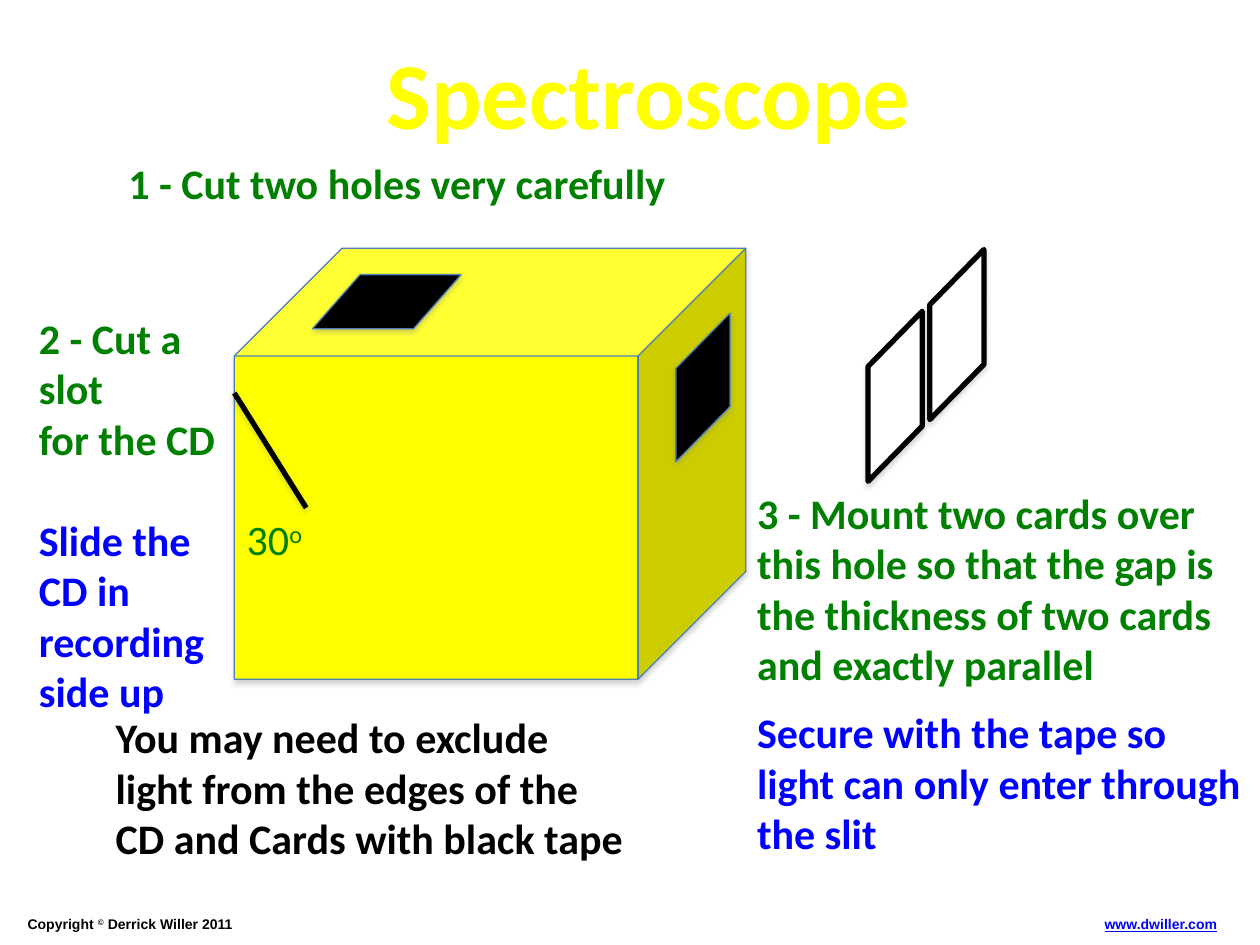
"""Build the Spectroscope instruction slide."""
from lxml.etree import SubElement
from pptx import Presentation
from pptx.dml.color import RGBColor
from pptx.enum.shapes import MSO_CONNECTOR, MSO_SHAPE
from pptx.enum.text import MSO_ANCHOR, PP_ALIGN
from pptx.oxml.ns import qn
from pptx.util import Inches, Pt

THEME = {
    "yellow": "FFFF00", "green": "008000", "blue": "0000FF",
    "black": "000000", "white": "FFFFFF", "edge": "4A7EBB", "shadow": "808080",
    "heading": "Calibri", "footer": "Arial",
    "title_size": 54, "body_size": 24, "footer_size": 8,
}

STEPS = [
    {"at": (0.92, 1.2, 4.52, 0.51), "wrap": False,
     "paras": [("1 - Cut two holes very carefully", "green", 0)]},
    {"at": (0.21, 2.43, 1.65, 3.33),
     "paras": [("2 - Cut a slot", "green", 0), ("for the CD", "green", 0),
               ("Slide the CD in recording side up", "blue", 29)]},
    {"at": (5.91, 3.82, 4.09, 3.06),
     "paras": [("3 - Mount two cards over this hole so that the gap is the "
                "thickness of two cards and exactly parallel", "green", 0),
               ("Secure with the tape so light can only enter through the slit",
                "blue", 10)]},
    {"at": (0.82, 5.6, 4.31, 1.31),
     "paras": [("You may need to exclude light from the edges of the CD and "
                "Cards with black tape", "black", 0)]},
]
TITLE = {"at": (2.97, 0.23, 4.38, 0.77), "wrap": False, "size": "title_size",
         "paras": [("Spectroscope", "yellow", 0)]}
ANGLE = {"at": (1.86, 4.03, 0.66, 0.5), "wrap": False, "bold": False,
         "paras": [("30^o", "green", 0)]}
COPYRIGHT = {"at": (0.12, 7.22, 5.65, 0.24), "font": "footer", "size": "footer_size",
             "paras": [("Copyright ^©^ Derrick Willer 2011", "black", 0)]}
WEBSITE = {"at": (8.42, 7.22, 1.34, 0.24), "font": "footer", "size": "footer_size",
           "align": PP_ALIGN.RIGHT, "underline": True,
           "paras": [("www.dwiller.com", "blue", 0)]}

CUBE = (1.86, 1.97, 4.06, 3.42)
TOP_HOLE = (2.48, 2.18, 1.18, 0.43)
SIDE_HOLE = (4.99, 2.86, 1.18, 0.43)
CARD = (6.92, 2.44, 1.35, 0.43)
CARD_STEP = 0.49
SLOT = (1.86, 3.12, 2.43, 4.03)


def color(name):
    return RGBColor.from_string(THEME[name])


def add_shadow(shape):
    properties = shape._element.spPr
    effects = properties.find(qn("a:effectLst"))
    if effects is None:
        effects = SubElement(properties, qn("a:effectLst"))
    outer = SubElement(effects, qn("a:outerShdw"), blurRad=str(Pt(3.1)),
                       dist=str(Pt(1.8)), dir="5400000", rotWithShape="0")
    tint = SubElement(outer, qn("a:srgbClr"), val=THEME["shadow"])
    SubElement(tint, qn("a:alpha"), val="35000")


def add_solid(page, kind, at, adjustment, fill, line="edge", width=0.75, upright=False):
    shape = page.shapes.add_shape(kind, *map(Inches, at))
    shape.adjustments[0] = adjustment
    shape.fill.solid()
    shape.fill.fore_color.rgb = color(fill)
    shape.line.color.rgb = color(line)
    shape.line.width = Pt(width)
    shape.shadow.inherit = False
    add_shadow(shape)
    if upright:
        shape.rotation = 90
        shape._element.spPr.xfrm.set("flipH", "1")


def add_slot(page):
    slot = page.shapes.add_connector(MSO_CONNECTOR.STRAIGHT, *map(Inches, SLOT))
    slot.line.color.rgb = color("black")
    slot.line.width = Pt(3)
    add_shadow(slot)


def add_text(page, at, paras, wrap=True, font="heading", size="body_size",
             bold=True, underline=False, align=PP_ALIGN.LEFT):
    frame = page.shapes.add_textbox(*map(Inches, at)).text_frame
    frame.word_wrap = wrap
    frame.vertical_anchor = MSO_ANCHOR.TOP
    for index, (text, tone, gap) in enumerate(paras):
        para = frame.add_paragraph() if index else frame.paragraphs[0]
        para.alignment = align
        if gap:
            para.space_before = Pt(gap)
        for order, piece in enumerate(text.split("^")):
            span = para.add_run()
            span.text = piece
            span.font.name = THEME[font]
            span.font.size = Pt(THEME[size])
            span.font.bold = bold
            span.font.underline = underline
            span.font.color.rgb = color(tone)
            if order % 2:
                span._r.get_or_add_rPr().set("baseline", "30000")


def main():
    deck = Presentation()
    deck.slide_width, deck.slide_height = Inches(10), Inches(7.5)
    page = deck.slides.add_slide(deck.slide_layouts[6])

    add_text(page, **COPYRIGHT)
    add_text(page, **WEBSITE)
    add_solid(page, MSO_SHAPE.CUBE, CUBE, 0.25, "yellow")
    add_solid(page, MSO_SHAPE.PARALLELOGRAM, TOP_HOLE, 0.88, "black")
    add_solid(page, MSO_SHAPE.PARALLELOGRAM, SIDE_HOLE, 1.02, "black", upright=True)
    add_slot(page)
    left, top, width, height = CARD
    for number in range(2):
        offset = number * CARD_STEP
        add_solid(page, MSO_SHAPE.PARALLELOGRAM,
                  (left - offset, top + offset, width, height),
                  1.02, "white", "black", 3, upright=True)
    for box in [ANGLE, *STEPS, TITLE]:
        add_text(page, **box)

    deck.save("out.pptx")


if __name__ == "__main__":
    main()
